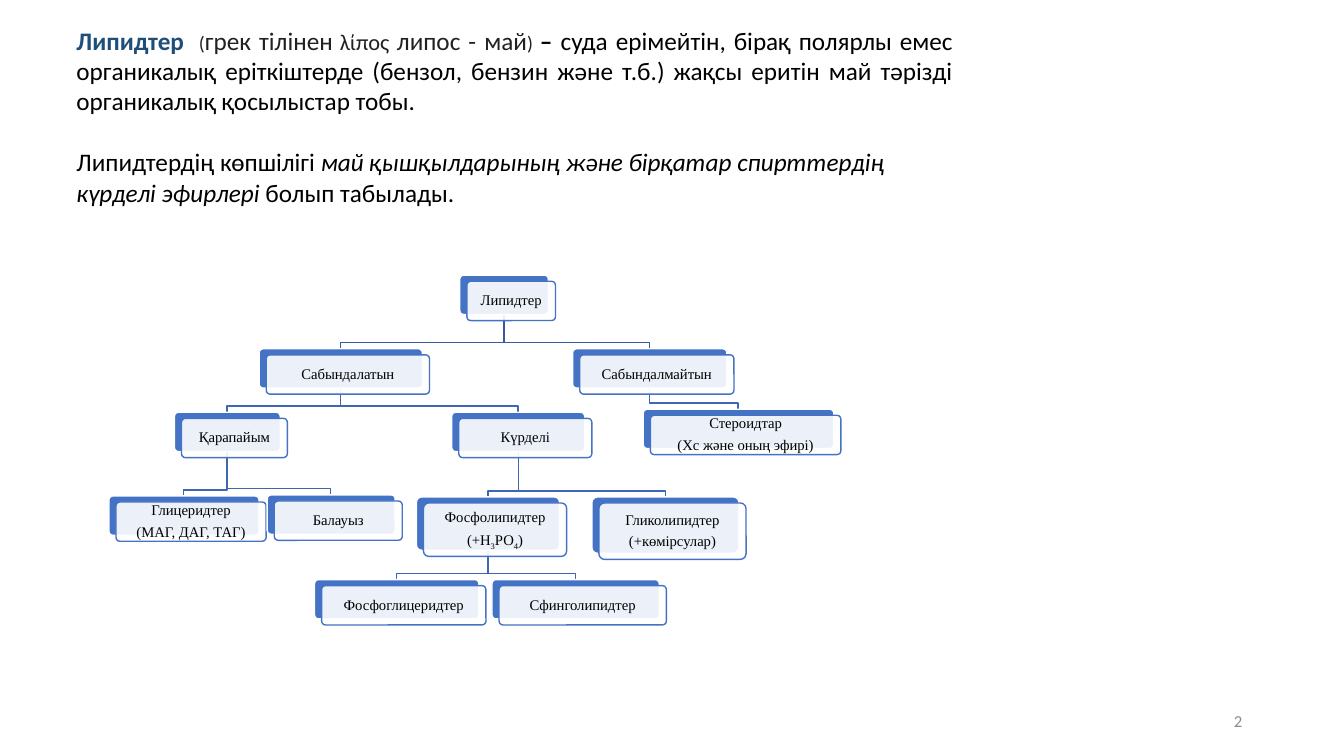
from lxml.etree import SubElement
from pptx import Presentation
from pptx.dml.color import RGBColor
from pptx.enum.shapes import MSO_SHAPE as Shape
from pptx.enum.text import MSO_ANCHOR as Anchor, PP_ALIGN as Align
from pptx.oxml.ns import qn
from pptx.util import Pt

PX = 9144  # one hundredth of an inch
BLUE = RGBColor(0x44, 0x72, 0xC4)
DARK = RGBColor(0x36, 0x5B, 0x9D)
MID = RGBColor(0x3E, 0x67, 0xB2)
NAVY = RGBColor(0x1F, 0x4E, 0x79)
INK = RGBColor(0x20, 0x21, 0x22)
GREY = RGBColor(0x8C, 0x8C, 0x8C)
BLACK = RGBColor(0, 0, 0)
WHITE = RGBColor(255, 255, 255)

deck = Presentation()
deck.slide_width, deck.slide_height = 1333 * PX, 750 * PX
shapes = deck.slides.add_slide(deck.slide_layouts[6]).shapes


def add_text(x, y, w, h):
    frame = shapes.add_textbox(x * PX, y * PX, w * PX, h * PX).text_frame
    frame.word_wrap = True
    return frame


def add_card(x, y, w, h, fill, line):
    card = shapes.add_shape(Shape.ROUNDED_RECTANGLE, x * PX, y * PX, w * PX, h * PX)
    card.adjustments[0] = 0.1
    card.shadow.inherit = False
    card.fill.solid()
    card.fill.fore_color.rgb = fill
    card.line.color.rgb = line
    card.line.width = Pt(1)
    return card


# Page number
frame = add_text(942, 695, 300, 40)
frame.vertical_anchor = Anchor.MIDDLE
para = frame.paragraphs[0]
para.text = "2"
para.alignment = Align.RIGHT
para.font.size, para.font.name = Pt(12), "Calibri"
para.font.color.rgb = GREY

# Definition: text, size, colour, bold, italic
lead = [
    ("Липидтер ", 18, NAVY, True, False),
    (" (", 14, INK, False, False),
    ("грек тілінен", 18, INK, False, False),
    (" ", 14, INK, False, False),
    ("λίπος ", 16, INK, False, False),
    ("липос - май", 18, INK, False, False),
    (") ", 14, INK, False, False),
    ("– ", 18, BLACK, True, False),
    ("суда ерімейтін, бірақ полярлы емес органикалық еріткіштерде "
     "(бензол, бензин және т.б.) жақсы еритін май тәрізді органикалық "
     "қосылыстар тобы.", 18, BLACK, False, False),
]
most = [
    ("Липидтердің көпшілігі ", 18, BLACK, False, False),
    ("май қышқылдарының және бірқатар спирттердің күрделі эфирлері",
     18, BLACK, False, True),
    (" болып табылады.", 18, BLACK, False, False),
]
frame = add_text(66, 20, 889, 192)
first, second = frame.paragraphs[0], frame.add_paragraph()
first.alignment, second.alignment = Align.JUSTIFY, Align.LEFT
first.space_after = Pt(22)
for para, parts in ((first, lead), (second, most)):
    para.font.name = "Calibri"
    for text, size, color, bold, slant in parts:
        run = para.add_run()
        run.text = text
        run.font.name, run.font.size = "Calibri", Pt(size)
        run.font.color.rgb = color
        run.font.bold, run.font.italic = bold, slant

# Tree: key -> parent, left, top, width, height, lines (_ marks a subscript)
tree = {
    "root": (None, 456, 273, 88, 39, ["Липидтер"]),
    "soap": ("root", 257, 346, 162, 39, ["Сабындалатын"]),
    "plain": ("soap", 173, 409, 105, 39, ["Қарапайым"]),
    "glyc": ("plain", 108, 492, 149, 39, ["Глицеридтер", "(МАГ, ДАГ, ТАГ)"]),
    "wax": ("plain", 265, 491, 127, 39, ["Балауыз"]),
    "mixed": ("soap", 448, 409, 132, 39, ["Күрделі"]),
    "phos": ("mixed", 413, 493, 142, 53, ["Фосфолипидтер", "(+Н_3_РО_4_)"]),
    "phgly": ("phos", 312, 575, 163, 39, ["Фосфоглицеридтер"]),
    "sphin": ("phos", 488, 575, 166, 39, ["Сфинголипидтер"]),
    "sugar": ("mixed", 587, 493, 146, 56, ["Гликолипидтер", "(+көмірсулар)"]),
    "other": ("root", 568, 346, 153, 39, ["Сабындалмайтын"]),
    "ster": ("other", 638, 406, 189, 39, ["Стероидтар", "(Хс және оның эфирі)"]),
}

# Branches turn just above the child
for parent, x, y, w, h, lines in tree.values():
    if parent:
        _, left, top, wide, high, _ = tree[parent]
        start, end, turn = left + wide // 2, x + w // 2, y - 6
        path = shapes.build_freeform(start, top + high, scale=float(PX))
        path.add_line_segments([(start, turn), (end, turn), (end, y)], close=False)
        branch = path.convert_to_shape()
        branch.shadow.inherit = False
        branch.fill.background()
        branch.line.color.rgb = DARK if parent == "root" else MID
        branch.line.width = Pt(1)

# Blue back cards with sheer white cards in front
for _, x, y, w, h, lines in tree.values():
    add_card(x, y, w, h, BLUE, WHITE)
    front = add_card(x + 7, y + 6, w, h, WHITE, BLUE)
    tint = front.fill._xPr.find(qn("a:solidFill"))[0]
    SubElement(tint, qn("a:alpha"), val="90000")
    frame = front.text_frame
    frame.word_wrap = True
    frame.vertical_anchor = Anchor.MIDDLE
    frame.margin_left = frame.margin_right = 5 * PX
    frame.margin_top = frame.margin_bottom = 5 * PX
    for i, line in enumerate(lines):
        para = frame.add_paragraph() if i else frame.paragraphs[0]
        para.alignment = Align.CENTER
        para.line_spacing, para.space_after = 0.9, Pt(4)
        para.font.name, para.font.size = "Times New Roman", Pt(10.5)
        para.font.color.rgb = BLACK
        for j, part in enumerate(line.split("_")):
            run = para.add_run()
            run.text = part
            if j % 2:
                run._r.get_or_add_rPr().set("baseline", "-25000")

deck.save("out.pptx")
